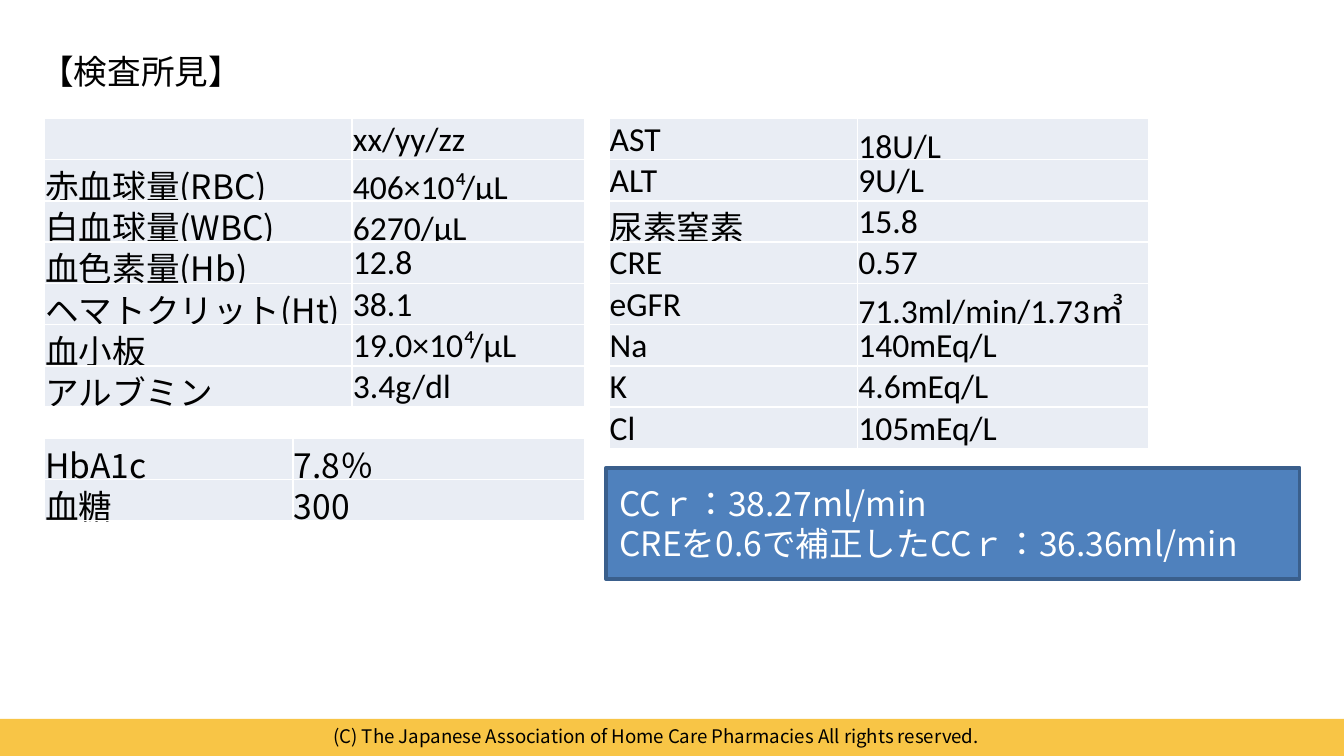
from lxml import etree
from pptx import Presentation, util as u
from pptx.dml.color import RGBColor
from pptx.enum import lang, shapes, text
from pptx.oxml.ns import qn

COLORS = {"bar": "F8C546", "cell": "E9EDF4", "box": "4F81BD",
          "edge": "3A5F8C", "white": "FFFFFF", "black": "000000"}
CJK, LATIN = "Noto Sans CJK JP", "Calibri"
ROW = 0.29

prs = Presentation()
prs.slide_width = u.Inches(10)
prs.slide_height = prs.slide_width * 9 // 16
s = prs.slides.add_slide(prs.slide_layouts[5])


def inches(*lengths):
    return [u.Inches(n) for n in lengths]


def style(p, size=18, font=CJK, color="black", align=text.PP_ALIGN.LEFT):
    p.alignment = align
    for r in p.runs:
        r.font.size, r.font.name = u.Pt(size), font
        r.font.language_id = lang.MSO_LANGUAGE_ID.JAPANESE
        r.font.color.rgb = RGBColor.from_string(COLORS[color])
        etree.SubElement(r.font._element, qn("a:ea"), typeface=CJK)


# Footer bar and copyright line
sp = s.shapes.add_shape(shapes.MSO_SHAPE.RECTANGLE, *inches(-0.2, 5.35, 10.39, 0.3))
sp.shadow.inherit = False
sp.fill.solid()
sp.fill.fore_color.rgb = RGBColor.from_string(COLORS["bar"])
sp.line.fill.background()

tf = s.shapes.add_textbox(*inches(1.77, 5.33, 6.22, 0.3)).text_frame
tf.word_wrap = True
tf.vertical_anchor = text.MSO_ANCHOR.MIDDLE
tf.text = "(C) The Japanese Association of Home Care Pharmacies All rights reserved."
style(tf.paragraphs[0], size=10, align=text.PP_ALIGN.CENTER)

# Heading
title = s.shapes.title
title.left, title.top, title.width, title.height = inches(0.2, 0.33, 5.2, 0.4)
tf = title.text_frame
tf.vertical_anchor = text.MSO_ANCHOR.TOP
tf.text = "【検査所見】"
style(tf.paragraphs[0])

# Test results: left, top, column widths, column fonts, rows
blood = [("", "xx/yy/zz"), ("赤血球量(RBC)", "406×10⁴/µL　"),
         ("白血球量(WBC)", "6270/µL　"), ("血色素量(Hb)", "12.8"),
         ("ヘマトクリット(Ht)", "38.1"), ("血小板", "19.0×10⁴/µL"),
         ("アルブミン", "3.4g/dl")]
chemistry = [("AST", "18U/L　"), ("ALT", "9U/L"), ("尿素窒素", "15.8"),
             ("CRE", "0.57"), ("eGFR", "71.3ml/min/1.73㎥"),
             ("Na", "140mEq/L"), ("K", "4.6mEq/L"), ("Cl", "105mEq/L")]
sugar = [("HbA1c", "7.8％"), ("血糖", "300")]
tables = [(0.33, 0.88, (2.29, 1.73), (CJK, LATIN), blood),
          (4.53, 0.88, (1.85, 2.17), (LATIN, LATIN), chemistry),
          (0.33, 3.26, (1.85, 2.17), (CJK, CJK), sugar)]

for left, top, widths, fonts, rows in tables:
    table = s.shapes.add_table(len(rows), 2, *inches(left, top, sum(widths), ROW * len(rows))).table
    for column, width in zip(table.columns, widths):
        column.width = u.Inches(width)
    for i, row in enumerate(rows):
        table.rows[i].height = u.Inches(ROW)
        for j, value in enumerate(row):
            cell = table.cell(i, j)
            cell.margin_left = cell.margin_top = cell.margin_right = u.Pt(0.5)
            cell.margin_bottom = 0
            cell.vertical_anchor = text.MSO_ANCHOR.MIDDLE
            cell.text = value
            p = cell.text_frame.paragraphs[0]
            p.font.size = u.Pt(18)
            style(p, font=fonts[j])
            # White rules, then the fill
            tcPr = cell._tc.get_or_add_tcPr()
            for side in ("lnL", "lnR", "lnT", "lnB"):
                ln = etree.SubElement(tcPr, qn(f"a:{side}"), w=str(u.Pt(1)))
                fill = etree.SubElement(ln, qn("a:solidFill"))
                etree.SubElement(fill, qn("a:srgbClr"), val=COLORS["white"])
            cell.fill.solid()
            cell.fill.fore_color.rgb = RGBColor.from_string(COLORS["cell"])

# Creatinine clearance box
sp = s.shapes.add_shape(shapes.MSO_SHAPE.RECTANGLE, *inches(4.51, 3.48, 5.16, 0.83))
sp.shadow.inherit = False
sp.fill.solid()
sp.fill.fore_color.rgb = RGBColor.from_string(COLORS["box"])
sp.line.color.rgb = RGBColor.from_string(COLORS["edge"])
sp.line.width = u.Pt(2)
tf = sp.text_frame
tf.vertical_anchor = text.MSO_ANCHOR.MIDDLE
tf.text = "CCｒ：38.27ml/min\nCREを0.6で補正したCCｒ：36.36ml/min"
for p in tf.paragraphs:
    style(p, color="white")

prs.save("out.pptx")
